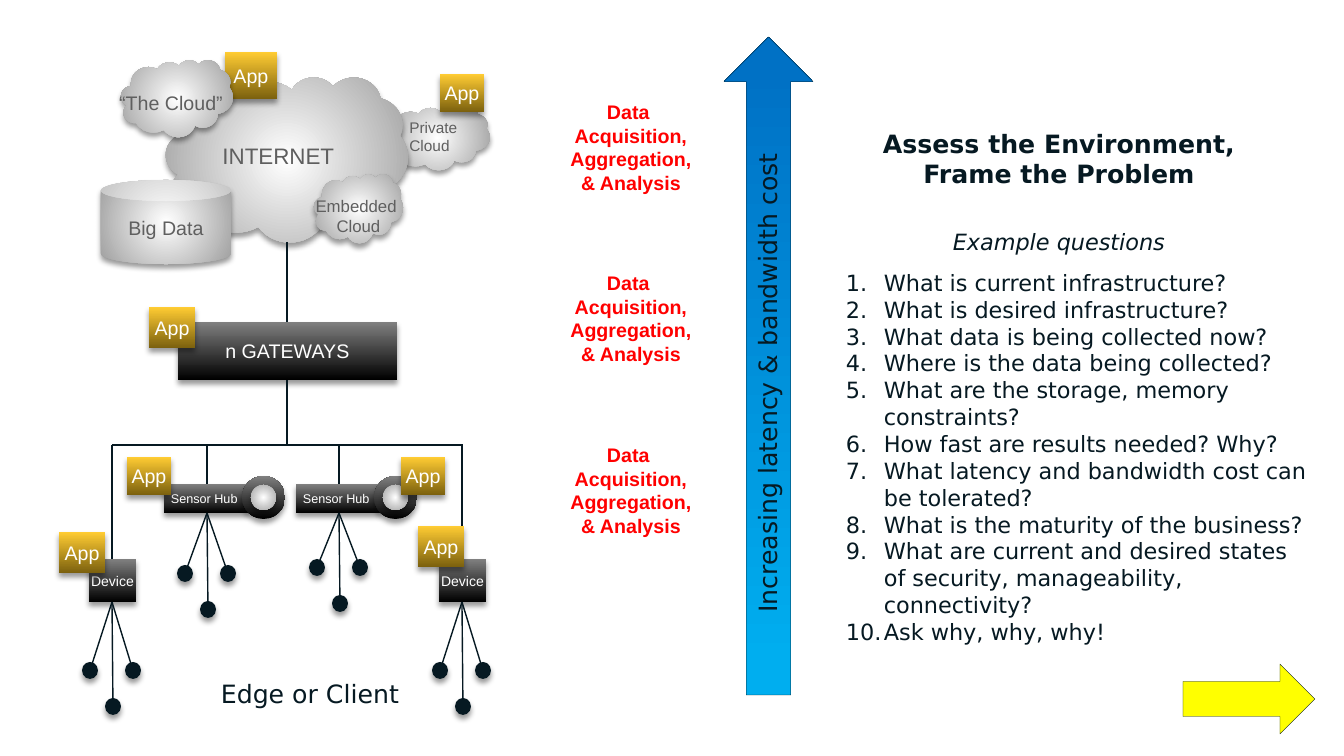
from copy import deepcopy

from lxml import etree
from pptx import Presentation
from pptx import util as u
from pptx.dml.color import RGBColor
from pptx.enum import shapes, text
from pptx.oxml import parse_xml
from pptx.oxml.ns import nsdecls, qn

PX = 914400 / 100.8
SLIDE = (1344, 756)
INK, WHITE, GREY, RED, YELLOW = "061922", "FFFFFF", "5F5F5F", "FF0000", "FFFF00"
SANS, WIDE = "Arial", "DejaVu Sans"

# Gradients: two (percent, colour) stops, and whether they spread from the centre
BLACK = ((0, "000000"), (100, "808080"), False)
GOLD = ((0, "7C610E"), (100, "FFCC33"), False)
BLUE = ((5, "00AEEF"), (95, "0071C5"), False)
SILVER = ((0, "FFFFFF"), (100, "9F9F9F"), True)

TITLE = "Assess the Environment, Frame the Problem"
QUESTIONS = """What is current infrastructure?
What is desired infrastructure?
What data is being collected now?
Where is the data being collected?
What are the storage, memory constraints?
How fast are results needed? Why?
What latency and bandwidth cost can be tolerated?
What is the maturity of the business?
What are current and desired states of security, manageability, connectivity?
Ask why, why, why!"""
STAGE = "Data \vAcquisition,\nAggregation,\n& Analysis"
STAGE_TOPS = [95, 266, 438]

CLOUD_APPS = [(440, 74, 44, 38), (225, 52, 52, 47)]
EDGE_APPS = [(149, 307, 46, 41), (418, 526, 46, 41), (59, 532, 46, 41),
             (127, 457, 44, 38), (401, 457, 44, 38)]
HUB_XS, HUB_TOP, HUB_H = [207, 339], 484, 29
DEVICE_XS, DEVICE_TOP, DEVICE_H = [112, 462], 559, 43
TRUNK_X, BUS_Y = 287, 445
SENSOR_TOPS = {207: 565, 339: 559, 112: 662, 462: 662}
SENSOR_OFFSETS = [(-30, 0), (-7, 36), (13, 0)]
SENSOR_W, SENSOR_H = 16, 17

prs = Presentation()
prs.slide_width, prs.slide_height = (u.Emu(round(n * PX)) for n in SLIDE)
slide = prs.slides.add_slide(prs.slide_layouts[6])


def px(*lengths):
    return [u.Emu(round(n * PX)) for n in lengths]


def rgb(value):
    return RGBColor.from_string(value)


def paint(sp, fill):
    """Fill with a colour string or a gradient tuple."""
    sp.fill.solid()
    if isinstance(fill, str):
        sp.fill.fore_color.rgb = rgb(fill)
        return
    *stops, radial = fill
    stop_xml = "".join(f'<a:gs pos="{pos * 1000}"><a:srgbClr val="{color}"/></a:gs>'
                       for pos, color in stops)
    way = ('<a:path path="circle"><a:fillToRect l="50000" t="50000" r="50000" b="50000"/></a:path>'
           if radial else '<a:lin ang="16200000" scaled="0"/>')
    grad = parse_xml(f'<a:gradFill {nsdecls("a")} rotWithShape="1">'
                     f'<a:gsLst>{stop_xml}</a:gsLst>{way}</a:gradFill>')
    solid = sp._element.spPr.find(qn("a:solidFill"))
    solid.getparent().replace(solid, grad)


def cast_shadow(sp):
    effects = sp._element.spPr.find(qn("a:effectLst"))
    effects.append(parse_xml(
        f'<a:outerShdw {nsdecls("a")} blurRad="50800" dist="38100" dir="5400000" rotWithShape="0">'
        '<a:srgbClr val="000000"><a:alpha val="40000"/></a:srgbClr></a:outerShdw>'))


def add_shape(kind, box, fill, line=None, shadow=True):
    sp = slide.shapes.add_shape(kind, *px(*box))
    sp.shadow.inherit = False
    paint(sp, fill)
    if line:
        sp.line.color.rgb = rgb(line)
        sp.line.width = u.Pt(0.25)
    else:
        sp.line.fill.background()
    if shadow:
        cast_shadow(sp)
    return sp


def write(sp, words, size, color, font=SANS, align="CENTER", wrap=False,
          bold=False, italic=False, numbered=False):
    """Set paragraphs split at newlines; a vertical tab is a line break."""
    tf = sp.text_frame
    tf.word_wrap = wrap
    for i, words_line in enumerate(words.split("\n")):
        p = tf.add_paragraph() if i else tf.paragraphs[0]
        p.text = words_line
        p.alignment = getattr(text.PP_ALIGN, align)
        if numbered:
            pPr = p._p.get_or_add_pPr()
            indent, = px(38)
            pPr.set("marL", str(indent))
            pPr.set("indent", str(-indent))
            etree.SubElement(pPr, qn("a:buFont"), typeface="+mj-lt")
            etree.SubElement(pPr, qn("a:buAutoNum"), type="arabicPeriod")
        for r in p.runs:
            r.font.size, r.font.name = u.Pt(size), font
            r.font.bold, r.font.italic = bold, italic
            r.font.color.rgb = rgb(color)
        for br in p._p.findall(qn("a:br")):
            br.append(deepcopy(p.runs[0]._r.rPr))
    return sp


def add_text(box, words, size, color, **fmt):
    return write(slide.shapes.add_textbox(*px(*box)), words, size, color, **fmt)


def add_line(x1, y1, x2, y2):
    ln = slide.shapes.add_connector(shapes.MSO_CONNECTOR.STRAIGHT, *px(x1, y1, x2, y2))
    ln.line.color.rgb = rgb(INK)
    ln.line.width = u.Pt(1)
    etree.SubElement(ln._element.spPr, qn("a:effectLst"))


def add_apps(boxes):
    for box in boxes:
        write(add_shape(KIND.RECTANGLE, box, GOLD), "App", 14, WHITE)


def add_sensors(x, y):
    """Three sensors hanging from the point (x, y)."""
    for dx, dy in SENSOR_OFFSETS:
        left, top = x + dx, SENSOR_TOPS[x] + dy
        add_shape(KIND.OVAL, (left, top, SENSOR_W, SENSOR_H), INK)
        add_line(x, y, left + SENSOR_W / 2, top + SENSOR_H / 2)


KIND = shapes.MSO_SHAPE

# Cost arrow, stages and questions
add_shape(KIND.UP_ARROW, (724, 37, 89, 658), BLUE, line=INK, shadow=False)
cost = add_text((524, 363, 486, 40), "Increasing latency & bandwidth cost", 18, INK, font=WIDE)
cost.rotation = 270
for top in STAGE_TOPS:
    add_text((560, top, 142, 105), STAGE, 14, RED, bold=True)
add_text((836, 264, 482, 390), QUESTIONS, 16, INK, font=WIDE, align="LEFT",
         wrap=True, numbered=True)
add_text((832, 123, 454, 72), TITLE, 18, INK, font=WIDE, wrap=True, bold=True)
add_text((942, 223, 234, 37), "Example questions", 16, INK, font=WIDE, italic=True)

# Gateways and clouds
write(add_shape(KIND.RECTANGLE, (178, 322, 219, 58), BLACK), "n GATEWAYS", 14, WHITE)
write(add_shape(KIND.CLOUD, (385, 106, 105, 64), SILVER), "Private Cloud", 11, GREY,
      align="LEFT", wrap=True)
write(add_shape(KIND.CLOUD, (166, 77, 242, 165), SILVER), "INTERNET", 16, GREY, wrap=True)
write(add_shape(KIND.CAN, (101, 180, 130, 84), SILVER), "Big Data", 14, GREY, wrap=True)
add_apps(CLOUD_APPS)
add_shape(KIND.CLOUD, (314, 174, 89, 69), SILVER)
add_text((305, 191, 107, 50), "Embedded \vCloud", 12, GREY)
add_shape(KIND.CLOUD, (121, 60, 112, 77), SILVER)
add_text((109, 86, 124, 34), "“The Cloud”", 14, GREY)

# Devices, sensor hubs and their wiring
add_line(TRUNK_X, 242, TRUNK_X, 322)
add_line(TRUNK_X, 380, TRUNK_X, BUS_Y)
add_line(DEVICE_XS[0], BUS_Y, DEVICE_XS[1] + 1, BUS_Y)
for x in DEVICE_XS:
    add_line(x, BUS_Y, x, DEVICE_TOP)
    box = (x - 23, DEVICE_TOP, 47, DEVICE_H)
    write(add_shape(KIND.RECTANGLE, box, BLACK), "Device", 10, WHITE)
    add_sensors(x, DEVICE_TOP + DEVICE_H)
for x in HUB_XS:
    add_line(x, BUS_Y, x, HUB_TOP)
    hub = add_shape(KIND.RECTANGLE, (x - 43, HUB_TOP, 85, HUB_H), BLACK)
    hub.text_frame.margin_left, hub.text_frame.margin_right = px(7, 0)
    write(hub, "Sensor Hub", 9, WHITE, align="LEFT", wrap=True)
    add_shape(KIND.OVAL, (x + 35, HUB_TOP - 8, 43, 43), BLACK)
    add_shape(KIND.OVAL, (x + 44, HUB_TOP + 1, 25, 25), SILVER)
    add_sensors(x, HUB_TOP + HUB_H)
add_apps(EDGE_APPS)
add_text((210, 673, 200, 40), "Edge or Client", 18, INK, font=WIDE)
add_shape(KIND.RIGHT_ARROW, (1183, 664, 132, 70), YELLOW, line=INK, shadow=False)

prs.save("out.pptx")
